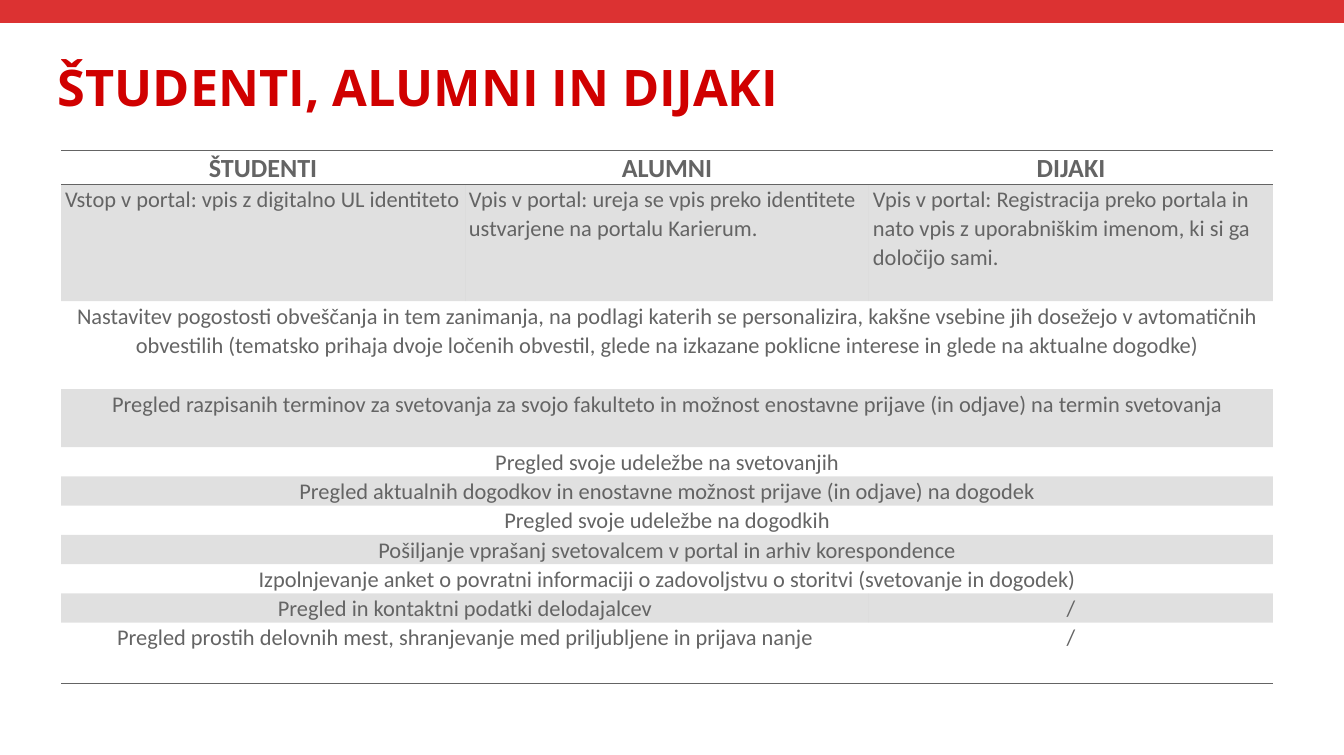
from lxml import etree
from pptx import Presentation
from pptx.dml.color import RGBColor
from pptx.enum.shapes import MSO_SHAPE
from pptx.enum.text import MSO_ANCHOR, MSO_AUTO_SIZE, PP_ALIGN
from pptx.oxml.ns import qn
from pptx.util import Pt

RECT = MSO_SHAPE.RECTANGLE
MIDDLE = MSO_ANCHOR.MIDDLE
TOP = MSO_ANCHOR.TOP
FIXED = MSO_AUTO_SIZE.NONE
LEFT = PP_ALIGN.LEFT
CENTER = PP_ALIGN.CENTER

RED = RGBColor(0xDC, 0x32, 0x32)
DARK_RED = RGBColor(0xD0, 0x00, 0x00)
GRAY = RGBColor(0x64, 0x64, 0x64)

PLAIN = "{2D5ABB26-0587-4C30-8999-92F81FD0307C}"
WIDE, HIGH = 1344, 755
COLS = [404] * 3

HEADS = ["ŠTUDENTI", "ALUMNI", "DIJAKI"]
ENTRY = [
    "Vstop v portal: vpis z digitalno UL identiteto",
    "Vpis v portal: ureja se vpis preko identitete ustvarjene na portalu Karierum.",
    "Vpis v portal: Registracija preko portala in nato vpis z uporabniškim "
    "imenom, ki si ga določijo sami.",
]
ROWS = [
    (29, HEADS),
    (117, ENTRY),
    (88, ["Nastavitev pogostosti obveščanja in tem zanimanja, na podlagi katerih se "
          "personalizira, kakšne vsebine jih dosežejo v avtomatičnih obvestilih "
          "(tematsko prihaja dvoje ločenih obvestil, glede na izkazane poklicne "
          "interese in glede na aktualne dogodke)"]),
    (58, ["Pregled razpisanih terminov za svetovanja za svojo fakulteto in možnost "
          "enostavne prijave (in odjave) na termin svetovanja"]),
    (29, ["Pregled svoje udeležbe na svetovanjih"]),
    (29, ["Pregled aktualnih dogodkov in enostavne možnost prijave (in odjave) na dogodek"]),
    (29, ["Pregled svoje udeležbe na dogodkih"]),
    (29, ["Pošiljanje vprašanj svetovalcem v portal in arhiv korespondence"]),
    (29, ["Izpolnjevanje anket o povratni informaciji o zadovoljstvu o storitvi "
          "(svetovanje in dogodek)"]),
    (29, ["Pregled in kontaktni podatki delodajalcev", "/"]),
    (61, ["Pregled prostih delovnih mest, shranjevanje med priljubljene in prijava nanje",
          "/"]),
]


def px(n):
    return round(n * 914400 / 67.2)


class Deck:
    def __init__(self):
        self.prs = Presentation()
        self.prs.slide_width = px(WIDE)
        self.prs.slide_height = px(HIGH)
        self.slide = self.prs.slides.add_slide(self.prs.slide_layouts[5])

    def put_run(self, para, text, font, size, color, bold):
        run = para.add_run()
        run.text = text
        run.font.name = font
        run.font.size = Pt(size)
        run.font.bold = bold
        run.font.color.rgb = color

    def bar(self, x, y, w, h):
        bar = self.slide.shapes.add_shape(RECT, px(x), px(y), px(w), px(h))
        bar.shadow.inherit = False
        bar.fill.solid()
        bar.fill.fore_color.rgb = RED
        bar.line.fill.background()

    def title(self, text, x, y, w, h):
        box = self.slide.shapes.title
        box.left, box.top, box.width, box.height = px(x), px(y), px(w), px(h)
        frame = box.text_frame
        frame.margin_left = frame.margin_right = 0
        frame.margin_top = frame.margin_bottom = 0
        frame.vertical_anchor = MIDDLE
        frame.auto_size = FIXED
        para = frame.paragraphs[0]
        para.alignment = LEFT
        self.put_run(para, text, "Open Sans", 54, DARK_RED, True)

    def edge(self, cell, tag):
        props = cell._tc.get_or_add_tcPr()
        line = etree.SubElement(props, qn(tag), w=str(Pt(1)))
        fill = etree.SubElement(line, qn("a:solidFill"))
        etree.SubElement(fill, qn("a:srgbClr"), val=str(GRAY))

    def shade(self, cell, band):
        if not band:
            cell.fill.background()
            return
        cell.fill.solid()
        cell.fill.fore_color.rgb = GRAY
        color = cell._tc.tcPr.find(".//" + qn("a:srgbClr"))
        etree.SubElement(color, qn("a:alpha"), val="20000")

    def cell(self, cell, text, size, bold, align):
        cell.margin_left = cell.margin_right = px(4)
        cell.margin_top = cell.margin_bottom = 0
        cell.vertical_anchor = TOP
        para = cell.text_frame.paragraphs[0]
        para.alignment = align
        para.line_spacing = 1.07
        self.put_run(para, text, "Calibri", size, GRAY, bold)

    def table(self, x, y, cols, rows):
        high = sum(h for h, _ in rows)
        frame = self.slide.shapes.add_table(
            len(rows), len(cols), px(x), px(y), px(sum(cols)), px(high))
        table = frame.table
        table.first_row = table.horz_banding = False
        table._tbl.tblPr.find(qn("a:tableStyleId")).text = PLAIN
        for col, wide in zip(table.columns, cols):
            col.width = px(wide)
        last = len(rows) - 1
        for r, (high, texts) in enumerate(rows):
            table.rows[r].height = px(high)
            for c in range(len(cols)):
                cell = table.cell(r, c)
                if r == 0:
                    self.edge(cell, "a:lnT")
                if r in (0, last):
                    self.edge(cell, "a:lnB")
                self.shade(cell, r % 2 == 1)
            span = len(cols) - len(texts) + 1
            if span > 1:
                table.cell(r, 0).merge(table.cell(r, span - 1))
            for i, text in enumerate(texts):
                cell = table.cell(r, i + span - 1 if i else 0)
                self.cell(cell, text, 24 if r else 28, r == 0,
                          LEFT if r == 1 else CENTER)

    def save(self):
        self.prs.save("out.pptx")


def main():
    deck = Deck()
    deck.bar(0, 0, WIDE, 23)
    deck.title("ŠTUDENTI, ALUMNI IN DIJAKI", 58, 56, 1069, 61)
    deck.table(61, 150, COLS, ROWS)
    deck.save()


if __name__ == "__main__":
    main()
